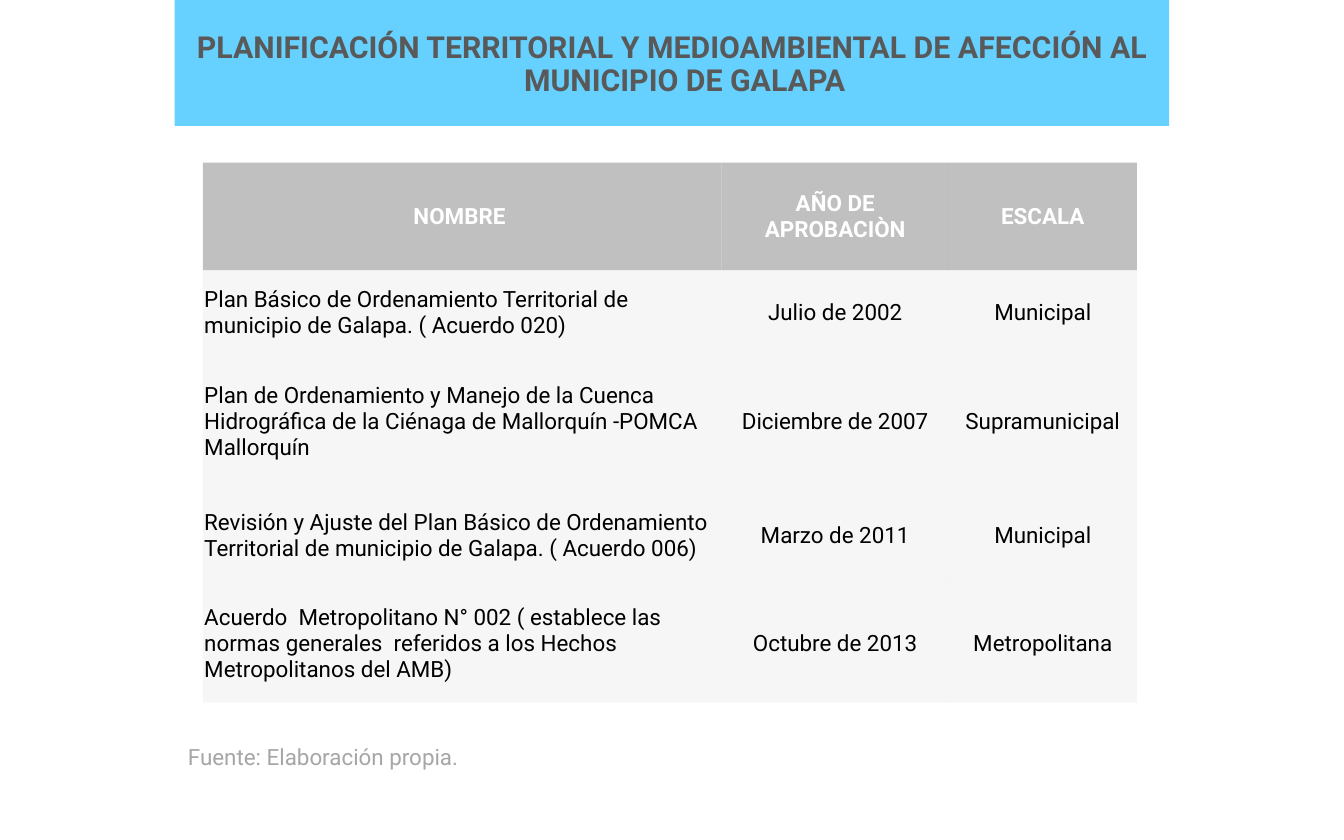
from dataclasses import dataclass

from lxml import etree
from pptx import Presentation
from pptx import util as u
from pptx.dml.color import RGBColor
from pptx.enum import shapes, text
from pptx.oxml.ns import qn

WIDTH, HEIGHT = 10, 6.25
PLAIN_TABLE = "{2D5ABB26-0587-4C30-8999-92F81FD0307C}"


@dataclass(frozen=True)
class Theme:
    font: str = "Roboto"
    title_size: float = 16.2
    body_size: float = 12
    title: str = "595959"
    body: str = "000000"
    header: str = "FFFFFF"
    source: str = "A6A6A6"
    band_fill: tuple = ("00B2FF", 60)
    header_fill: tuple = ("A6A6A6", 70)
    row_fill: tuple = ("BFBFBF", 13)


THEME = Theme()
TITLE = "PLANIFICACIÓN TERRITORIAL Y MEDIOAMBIENTAL DE AFECCIÓN AL MUNICIPIO DE GALAPA"
SOURCE = "Fuente: Elaboración propia."
COLUMNS = [3.86, 1.69, 1.4]
ROWS = [0.8, 0.63, 0.99, 0.71, 0.89]
PLANS = [
    ("NOMBRE ", "AÑO DE APROBACIÒN", "ESCALA"),
    ("Plan Básico de Ordenamiento Territorial de municipio de Galapa. ( Acuerdo 020)",
     "Julio de 2002", "Municipal"),
    ("Plan de Ordenamiento y Manejo de la Cuenca Hidrográfica de la Ciénaga de "
     "Mallorquín -POMCA Mallorquín", "Diciembre de 2007", "Supramunicipal"),
    ("Revisión y Ajuste del Plan Básico de Ordenamiento Territorial de municipio de "
     "Galapa. ( Acuerdo 006)", "Marzo de 2011", "Municipal"),
    ("Acuerdo  Metropolitano N° 002 ( establece las normas generales  referidos a los "
     "Hechos Metropolitanos del AMB)", "Octubre de 2013", "Metropolitana"),
]


def share_box(left, top, width, height):
    """Turn shares of the slide's size into lengths."""
    return (u.Inches(left * WIDTH), u.Inches(top * HEIGHT),
            u.Inches(width * WIDTH), u.Inches(height * HEIGHT))


def tint(fill, colour, opacity):
    """Fill with a colour at an opacity in percent."""
    fill.solid()
    fill.fore_color.rgb = RGBColor.from_string(colour)
    for element in fill.fore_color._xFill.iter(qn("a:srgbClr")):
        etree.SubElement(element, qn("a:alpha")).set("val", str(opacity * 1000))


def write(para, words, colour, size=THEME.body_size, bold=False,
          align=text.PP_ALIGN.LEFT):
    para.alignment = align
    span = para.add_run()
    span.text = words
    span.font.name = THEME.font
    span.font.size = u.Pt(size)
    span.font.bold = bold
    span.font.color.rgb = RGBColor.from_string(colour)


def place_title(page, band_box, title_box):
    title = page.shapes.title
    band = page.shapes.add_shape(shapes.MSO_SHAPE.RECTANGLE, *band_box)
    band.shadow.inherit = False
    band.line.fill.background()
    tint(band.fill, *THEME.band_fill)
    title.element.addprevious(band.element)

    title.left, title.top, title.width, title.height = title_box
    frame = title.text_frame
    frame.word_wrap = True
    frame.auto_size = text.MSO_AUTO_SIZE.NONE
    frame.vertical_anchor = text.MSO_ANCHOR.TOP
    frame.margin_left = frame.margin_right = u.Inches(0.1)
    frame.margin_top = frame.margin_bottom = u.Inches(0.1)
    para = frame.paragraphs[0]
    write(para, TITLE, THEME.title, THEME.title_size, True, text.PP_ALIGN.CENTER)
    para.line_spacing = 0.9
    hanging = u.Inches(0.19)
    properties = para._p.get_or_add_pPr()
    properties.set("marL", str(hanging))
    properties.set("indent", str(-hanging))


def place_plans(page, box):
    left, top, width, height = box
    table = page.shapes.add_table(len(ROWS), len(COLUMNS), *box).table
    table.horz_banding = False
    table._tbl.tblPr.find(qn("a:tableStyleId")).text = PLAIN_TABLE
    for column, part in zip(table.columns, COLUMNS):
        column.width = int(width * part / sum(COLUMNS))
    for row, part in zip(table.rows, ROWS):
        row.height = int(height * part / sum(ROWS))

    for r, plan in enumerate(PLANS):
        is_header = r == 0
        for c, words in enumerate(plan):
            cell = table.cell(r, c)
            cell.vertical_anchor = text.MSO_ANCHOR.MIDDLE
            cell.margin_left = cell.margin_right = cell.margin_top = u.Inches(0.01)
            cell.margin_bottom = 0
            tint(cell.fill, *(THEME.header_fill if is_header else THEME.row_fill))
            centred = is_header or c > 0
            write(cell.text_frame.paragraphs[0], words,
                  THEME.header if is_header else THEME.body, bold=is_header,
                  align=text.PP_ALIGN.CENTER if centred else text.PP_ALIGN.LEFT)


def place_source(page, box):
    frame = page.shapes.add_textbox(*box).text_frame
    frame.word_wrap = False
    frame.auto_size = text.MSO_AUTO_SIZE.SHAPE_TO_FIT_TEXT
    write(frame.paragraphs[0], SOURCE, THEME.source)


def main():
    deck = Presentation()
    deck.slide_width, deck.slide_height = u.Inches(WIDTH), u.Inches(HEIGHT)
    page = deck.slides.add_slide(deck.slide_layouts.get_by_name("Title Only"))
    place_title(page, share_box(0.13, 0, 0.74, 0.15),
                share_box(0.13, 0.14 / HEIGHT, 0.74, 0.55 / HEIGHT))
    place_plans(page, share_box(0.151, 1.21 / HEIGHT, sum(COLUMNS) / WIDTH,
                                sum(ROWS) / HEIGHT))
    place_source(page, share_box(0.13, 5.48 / HEIGHT, 0.227, 0.3 / HEIGHT))
    deck.save("out.pptx")


if __name__ == "__main__":
    main()
